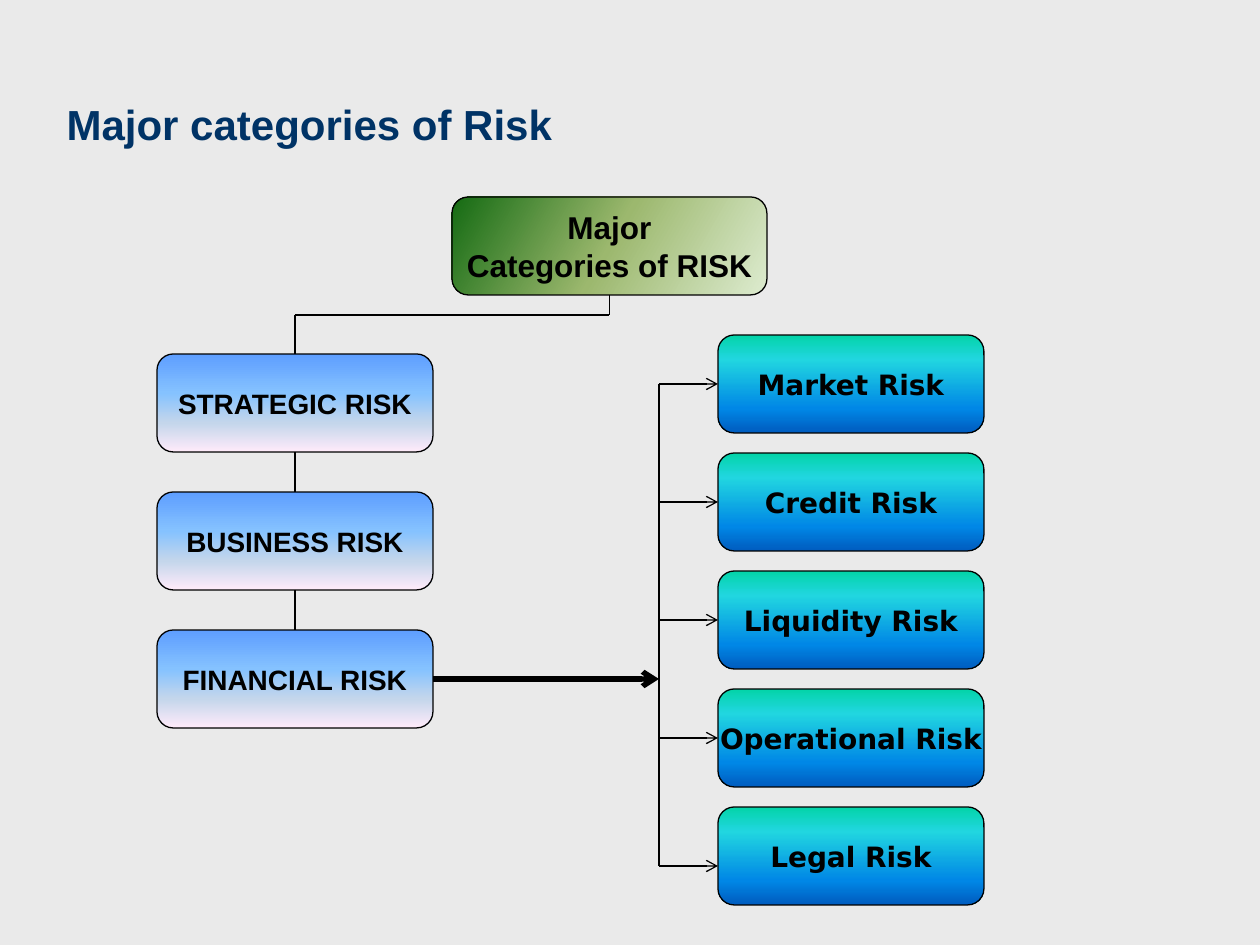
import pptx
import pptx.util
import pptx.dml.color
import pptx.enum.shapes
import pptx.enum.text
import pptx.oxml
import pptx.oxml.ns
import lxml.etree

PX = 914400 / 126  # EMU per px
COLORS = {"background": "EAEAEA", "title": "003366", "ink": "000000"}
GRADIENTS = {  # clockwise angle, then (percent, colour) stops
    "root": (210, [(0, "DDEBCF"), (50, "9CB86E"), (100, "156B13")]),
    "category": (90, [(0, "5E9EFF"), (40, "85C2FF"), (70, "C4D6EB"), (100, "FFEBFA")]),
    "financial": (90, [(0, "03D4A8"), (25, "21D6E0"), (75, "0087E6"), (100, "005CBF")]),
}
TOP, LEFT, BOTTOM, RIGHT = range(4)  # connection sites
ANCHOR = pptx.enum.text.MSO_ANCHOR
ALIGN = pptx.enum.text.PP_ALIGN
qn = pptx.oxml.ns.qn


def px(n):
    return pptx.util.Emu(round(n * PX))


def rgb(name):
    return pptx.dml.color.RGBColor.from_string(COLORS[name])


def write(s, text, size=16, font="Arial", color="ink", align=ALIGN.CENTER,
          anchor=ANCHOR.MIDDLE, wrap=False):
    tf = s.text_frame
    tf.word_wrap = wrap
    tf.vertical_anchor = anchor
    p = tf.paragraphs[0]
    p.text = text
    p.alignment = align
    for r in p.runs:
        r.font.size = pptx.util.Pt(size)
        r.font.name = font
        r.font.bold = True
        r.font.color.rgb = rgb(color)


def fill_gradient(s, name):
    angle, stops = GRADIENTS[name]
    s.fill.gradient()
    s.fill.gradient_angle = (360 - angle) % 360
    gs_list = s._element.spPr.find(qn("a:gradFill")).find(qn("a:gsLst"))
    for gs in list(gs_list):
        gs_list.remove(gs)
    for percent, color in stops:
        gs = lxml.etree.SubElement(gs_list, qn("a:gs"), pos=str(percent * 1000))
        lxml.etree.SubElement(gs, qn("a:srgbClr"), val=color)


def add_box(slide, box, text, gradient, **text_format):
    s = slide.shapes.add_shape(pptx.enum.shapes.MSO_SHAPE.ROUNDED_RECTANGLE,
                               *map(px, box))
    s.shadow.inherit = False
    fill_gradient(s, gradient)
    s.line.color.rgb = rgb("ink")
    s.line.width = pptx.util.Pt(0.75)
    write(s, text, **text_format)
    return s


def add_line(slide, start, end, width=0.75, arrow=False, begin=None, finish=None):
    """begin and finish are (shape, site) pairs to join the ends to."""
    c = slide.shapes.add_connector(pptx.enum.shapes.MSO_CONNECTOR.STRAIGHT,
                                   *map(px, (*start, *end)))
    if begin:
        c.begin_connect(*begin)
    if finish:
        c.end_connect(*finish)
    c.line.color.rgb = rgb("ink")
    c.line.width = pptx.util.Pt(width)
    if arrow:
        lxml.etree.SubElement(c.line._get_or_add_ln(), qn("a:tailEnd"), type="arrow")
    lxml.etree.SubElement(c._element.spPr, qn("a:effectLst"))


def add_title(slide, box, text):
    s = slide.shapes.title
    s.left, s.top, s.width, s.height = map(px, box)
    write(s, text, size=24, color="title", align=ALIGN.LEFT,
          anchor=ANCHOR.BOTTOM, wrap=True)


def add_stack(slide, box, pitch, labels, gradient, **text_format):
    x, y, w, h = box
    return [add_box(slide, (x, y + i * pitch, w, h), label, gradient, **text_format)
            for i, label in enumerate(labels)]


def add_categories(slide, box, root, root_foot):
    """Stack of main categories, chained together and hung from the root box."""
    x, y, w, h = box
    pitch, mid = 138, x + w / 2
    boxes = add_stack(slide, box, pitch,
                      ["STRATEGIC RISK", "BUSINESS RISK", "FINANCIAL RISK"], "category")
    for i, (upper, lower) in enumerate(zip(boxes, boxes[1:])):
        top = y + i * pitch + h
        add_line(slide, (mid, top), (mid, top + pitch - h),
                 begin=(upper, BOTTOM), finish=(lower, TOP))
    # Elbow up to the root
    root_x, root_y = root_foot
    elbow = root_y + 20
    add_line(slide, root_foot, (root_x, elbow), begin=(root, BOTTOM))
    add_line(slide, (mid, elbow), (root_x, elbow))
    add_line(slide, (mid, elbow), (mid, y), finish=(boxes[0], TOP))
    return boxes


def add_financial_risks(slide, box, bus_x):
    """Stack of financial risks fed by arrows from one vertical line."""
    x, y, w, h = box
    pitch = 118
    boxes = add_stack(slide, box, pitch,
                      ["Market Risk", "Credit Risk", "Liquidity Risk",
                       "Operational Risk", "Legal Risk"],
                      "financial", font="DejaVu Sans")
    levels = [y + h / 2 + i * pitch for i in range(len(boxes))]
    for s, level in zip(boxes[:-1], levels):
        add_line(slide, (bus_x, level), (x, level), arrow=True, finish=(s, LEFT))
    # The last arrow enters below the middle of its box
    last = levels[-1] + 10
    add_line(slide, (bus_x, last), (x, last), arrow=True)
    add_line(slide, (bus_x, levels[0]), (bus_x, last))


def main():
    prs = pptx.Presentation()
    prs.slide_width, prs.slide_height = px(1260), px(945)
    slide = prs.slides.add_slide(prs.slide_layouts[5])
    slide.background.fill.solid()
    slide.background.fill.fore_color.rgb = rgb("background")

    add_title(slide, (54, 92, 1121, 63), "Major categories of Risk")
    root = add_box(slide, (452, 197, 315, 98), "Major\vCategories of RISK", "root", size=18)
    categories = add_categories(slide, (157, 354, 276, 98), root, (609.5, 295))
    bus_x = 659
    add_financial_risks(slide, (718, 335, 266, 98), bus_x)
    # Financial risk leads to its breakdown
    add_line(slide, (433, 679), (bus_x, 679), width=3, arrow=True,
             begin=(categories[-1], RIGHT))
    prs.save("out.pptx")


if __name__ == "__main__":
    main()
